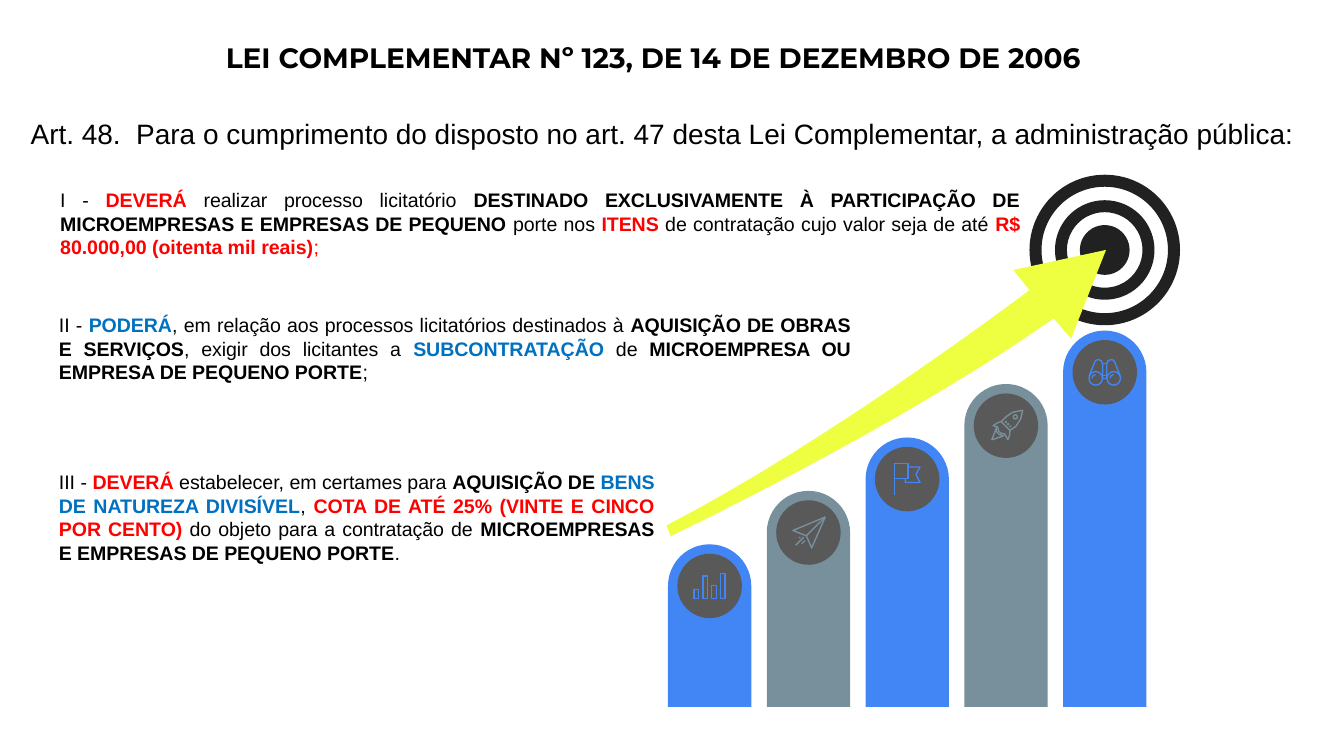
import math

import pptx
import pptx.dml.color
import pptx.enum.shapes
import pptx.enum.text
import pptx.util
from pptx.util import Inches

BLUE, GREY, DARK, YELLOW = "4285F4", "78909C", "212121", "EEFF41"
BADGE = "595959"
SHAPES = pptx.enum.shapes.MSO_SHAPE
ALIGN = pptx.enum.text.PP_ALIGN


def paint(fill, colour):
    fill.solid()
    fill.fore_color.rgb = pptx.dml.color.RGBColor.from_string(colour)


def draw_outline(strokes):
    """Draw one freeform from lists of points in inches."""
    strokes = [[(Inches(x), Inches(y)) for x, y in stroke] for stroke in strokes]
    builder = slide.shapes.build_freeform(*strokes[0][0], scale=1.0)
    for number, stroke in enumerate(strokes):
        if number:
            builder.move_to(*stroke[0])
        builder.add_line_segments(stroke[1:], close=stroke[0] == stroke[-1])
    return builder.convert_to_shape()


# A 16:9 slide
prs = pptx.Presentation()
prs.slide_width = Inches(10)
prs.slide_height = Inches(10 * 9 / 16)
slide = prs.slides.add_slide(prs.slide_layouts[5])
solids = []

# Target: two rings and a bullseye around one centre
target_x, target_y = 8.22, 1.86
for size, thickness in [(1.12, 0.08), (0.74, 0.12), (0.37, None)]:
    kind = SHAPES.DONUT if thickness else SHAPES.OVAL
    ring = slide.shapes.add_shape(kind, Inches(target_x - size / 2), Inches(target_y - size / 2),
                                  Inches(size), Inches(size))
    if thickness:
        ring.adjustments[0] = thickness
    solids.append((ring, DARK))

# Five rising columns with round tops
columns = [(4.97 + 0.735 * i, 4.05 - 0.3975 * i, (BLUE, GREY)[i % 2]) for i in range(5)]
for left, top, colour in columns:
    column = slide.shapes.add_shape(SHAPES.ROUND_2_SAME_RECTANGLE, Inches(left), Inches(top),
                                    Inches(0.62), Inches(5.26 - top))
    column.adjustments[0] = 0.5
    solids.append((column, colour))

# Curved arrow up to the target
curves = [[(7.66, 2.16), (7.58, 2.22), (6.16, 3.29), (4.96, 3.91)],
          [(4.99, 3.99), (5.47, 3.76), (6.86, 3.06), (7.84, 2.37)]]
upper, lower = [
    [tuple((1 - t) ** 3 * a + 3 * t * (1 - t) ** 2 * b + 3 * t * t * (1 - t) * c + t ** 3 * d
           for a, b, c, d in zip(*curve)) for t in [step / 16 for step in range(17)]]
    for curve in curves]
tip = (8.23, 1.86)
arrow = draw_outline([[tip, (7.54, 2.01), *upper, *lower, (7.97, 2.52), tip]])
solids.append((arrow, YELLOW))

# Badges on the columns
for left, top, _ in columns:
    badge = slide.shapes.add_shape(SHAPES.OVAL, Inches(left + 0.07), Inches(top + 0.07),
                                   Inches(0.48), Inches(0.48))
    solids.append((badge, BADGE))

# Badge icons: strokes in hundredths of an inch from the badge centre
turn = [(math.cos(step * math.pi / 12), math.sin(step * math.pi / 12)) for step in range(25)]
bar_icon = [[(x, 9.5), (x, y), (x + 3.5, y), (x + 3.5, 9.5), (x, 9.5)]
            for x, y in [(-11.5, 2.5), (-5, -7.5), (1.5, -0.5), (8, -9.5)]]
plane_icon = [
    [(-1.5, 2.5), (-11.5, -1.5), (12.5, -11.5), (2.5, 11.5), (-1.5, 2.5)],
    [(-1.5, 2.5), (12.5, -11.5)],
    [(-2.5, 6), (-5, 8.5)], [(-6, 3.5), (-7, 4)], [(-3.5, 3.5), (-9.5, 9.5)]]
flag_icon = [
    [(-9.5, 12), (-9.5, -11.5), (0.5, -11.5), (0.5, -0.5), (-9.5, -0.5)],
    [(0.5, -9), (9.5, -9), (6.5, -3.5), (9.5, 2.5), (-1.5, 2.5), (-1.5, -0.5)]]
rocket_icon = [
    [(12.5, -11.5), (11, -5), (7.5, 0.5), (3, 3.5), (-3.5, -3), (0, -6.5), (5, -10), (12.5, -11.5)],
    [(-3.5, -3), (-6.5, -2), (-9.5, 0), (-6, 1), (-5.5, 4), (-4, 5.5), (-1, 6), (1.5, 10.5),
     (2.8, 7), (3, 3.5)],
    [(-7, 1.5), (-10.5, 10.5), (-1.5, 7.5), (-5, 6.5), (-7, 4.5), (-7, 1.5)]]
rocket_icon += [[(x + r * c, y + r * s) for c, s in turn]
                for x, y, r in [(7, -6.5, 1.5), (0, -2.7, 0.3), (1.6, -1.2, 0.3), (3.3, 0.5, 0.3)]]
binoculars_icon = [[(-1.5, y), (1.5, y)] for y in (-6.5, 2.5, 4.5)]
for side in (-1, 1):
    binoculars_icon += [
        [(side * x, y) for x, y in [(11.5, 2.5), (7.5, -7.5), (6.5, -9), (4.5, -9.5), (2.5, -8.5),
                                    (1.5, -6.5), (1.5, 4.5)]],
        [(side * 6.7 + 5 * c, 4.5 + 5 * s) for c, s in turn],
        [(side * 6.7 + 2.7 * c, 4.5 + 2.7 * s) for c, s in turn[12:19]]]

icons = [bar_icon, plane_icon, flag_icon, rocket_icon, binoculars_icon]
for (left, top, colour), strokes in zip(columns, icons):
    icon = draw_outline([[(left + 0.31 + x / 100, top + 0.31 + y / 100) for x, y in stroke]
                         for stroke in strokes])
    icon.shadow.inherit = False
    icon.fill.background()
    paint(icon.line.fill, colour)
    icon.line.width = pptx.util.Pt(0.75)

for solid, colour in solids:
    solid.shadow.inherit = False
    solid.line.fill.background()
    paint(solid.fill, colour)

# Title, article heading and the three items
styles = {"plain": ("000000", False), "strong": ("000000", True), "red": ("FF0000", True),
          "blue": ("0070C0", True), "red plain": ("FF0000", False)}
title = [("strong", "LEI COMPLEMENTAR Nº 123, DE 14 DE DEZEMBRO DE 2006")]
article = [("plain", "Art. 48.  Para o cumprimento do disposto no art. 47 desta Lei Complementar, "
                     "a administração pública:")]
item_1 = [
    ("plain", "I - "), ("red", "DEVERÁ"), ("plain", " realizar processo licitatório "),
    ("strong", "DESTINADO EXCLUSIVAMENTE À PARTICIPAÇÃO DE MICROEMPRESAS E EMPRESAS DE PEQUENO"),
    ("plain", " porte nos "), ("red", "ITENS "),
    ("plain", "de contratação cujo valor seja de até "),
    ("red", "R$ 80.000,00 (oitenta mil reais)"), ("red plain", ";")]
item_2 = [
    ("plain", "II - "), ("blue", "PODERÁ"),
    ("plain", ", em relação aos processos licitatórios destinados à "),
    ("strong", "AQUISIÇÃO DE OBRAS E SERVIÇOS"), ("plain", ", exigir dos licitantes a "),
    ("blue", "SUBCONTRATAÇÃO"), ("plain", " de "),
    ("strong", "MICROEMPRESA OU EMPRESA DE PEQUENO PORTE"), ("plain", ";")]
item_3 = [
    ("plain", "III - "), ("red", "DEVERÁ"), ("plain", " estabelecer, em certames para "),
    ("strong", "AQUISIÇÃO DE "), ("blue", "BENS DE NATUREZA DIVISÍVEL"), ("plain", ", "),
    ("red", "COTA DE ATÉ 25% (VINTE E CINCO POR CENTO)"),
    ("plain", " do objeto para a contratação de "),
    ("strong", "MICROEMPRESAS E EMPRESAS DE PEQUENO PORTE"), ("plain", ".")]

for pieces, area, size, font, align in [
        (article, (0.13, 0.82, 10, 0.35), 15, "Arial", ALIGN.LEFT),
        (title, (1.58, 0.25, 7.4, 0.35), 15, "Montserrat", ALIGN.LEFT),
        (item_1, (0.35, 1.35, 7.34, 0.63), 10.5, "Arial", ALIGN.JUSTIFY),
        (item_2, (0.34, 2.28, 6.09, 0.63), 10.5, "Arial", ALIGN.JUSTIFY),
        (item_3, (0.34, 3.45, 4.63, 0.81), 10.5, "Arial", ALIGN.JUSTIFY)]:
    left, top, width, height = [Inches(length) for length in area]
    if pieces is title:
        box = slide.shapes.title
        box.left, box.top, box.width, box.height = left, top, width, height
    else:
        box = slide.shapes.add_textbox(left, top, width, height)
    frame = box.text_frame
    frame.word_wrap = True
    frame.auto_size = pptx.enum.text.MSO_AUTO_SIZE.NONE
    frame.vertical_anchor = pptx.enum.text.MSO_ANCHOR.TOP
    paragraph = frame.paragraphs[0]
    paragraph.alignment = align
    for style, text in pieces:
        run = paragraph.add_run()
        run.text = text
        colour, run.font.bold = styles[style]
        run.font.name = font
        run.font.size = pptx.util.Pt(size)
        paint(run.font.fill, colour)

prs.save("out.pptx")
